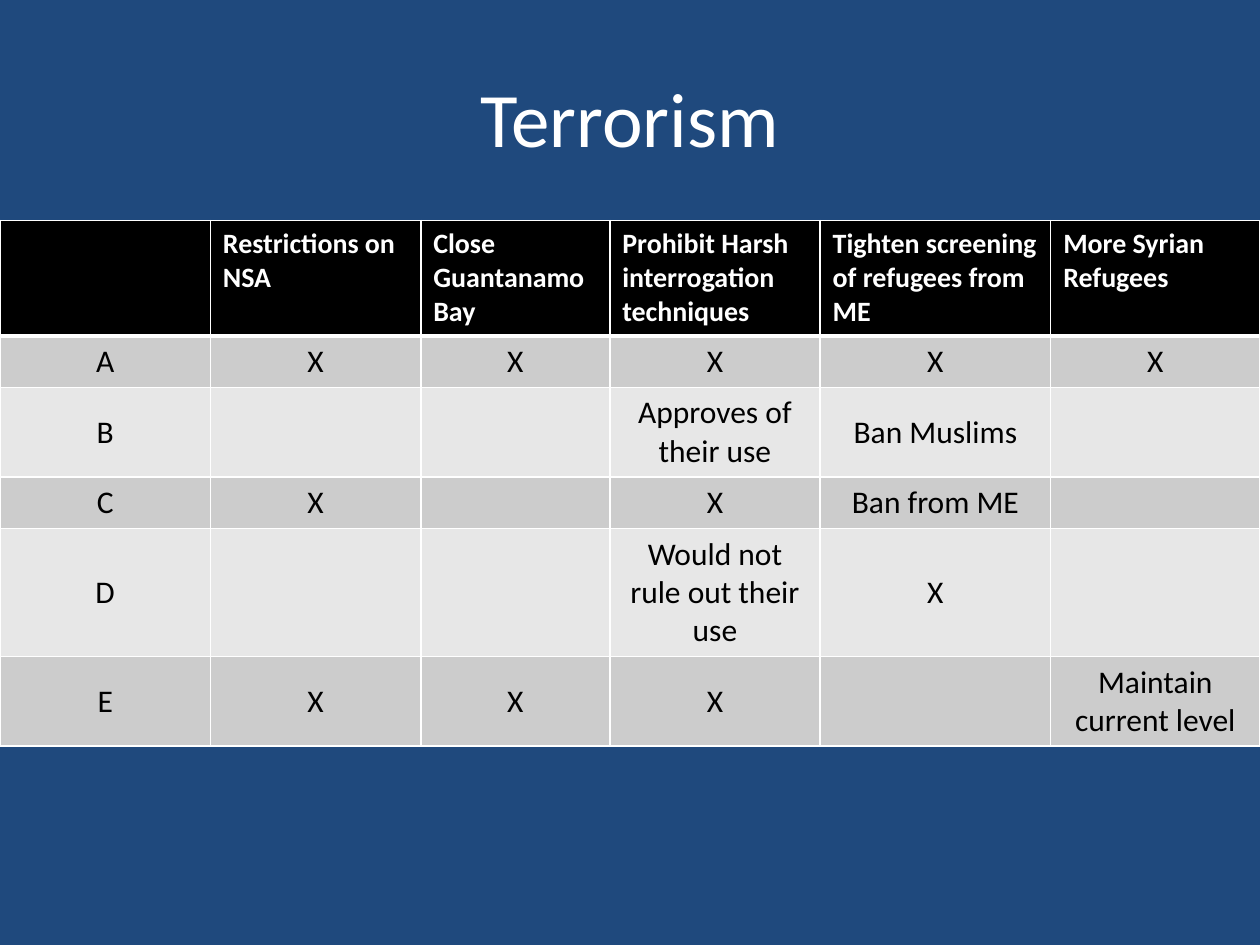
import pptx
import pptx.util
import pptx.dml.color
import pptx.enum.text
import pptx.oxml.ns
import lxml.etree

Inches = pptx.util.Inches
Pt = pptx.util.Pt
ALIGN = pptx.enum.text.PP_ALIGN
ANCHOR = pptx.enum.text.MSO_ANCHOR

COLORS = {
    "background": "1F497D",
    "white": "FFFFFF",
    "black": "000000",
    "dark_band": "CCCCCC",
    "light_band": "E7E7E7",
}

COLUMN_WIDTHS = [1.67, 1.67, 1.5, 1.67, 1.83, 1.66]
ROW_HEIGHT = 0.41
POSITIONS = [
    ["", "Restrictions on NSA", "Close Guantanamo Bay",
     "Prohibit Harsh interrogation techniques",
     "Tighten screening of refugees from ME", "More Syrian Refugees"],
    ["A", "X", "X", "X", "X", "X"],
    ["B", "", "", "Approves of their use", "Ban Muslims", ""],
    ["C", "X", "", "X", "Ban from ME", ""],
    ["D", "", "", "Would not rule out their use", "X", ""],
    ["E", "X", "X", "X", "", "Maintain current level"],
]


class SlideBuilder:
    font_name = "Calibri"

    def __init__(self, prs):
        self.s = prs.slides.add_slide(prs.slide_layouts[5])

    def color(self, name):
        return pptx.dml.color.RGBColor.from_string(COLORS[name])

    def fill(self, target, name):
        target.fill.solid()
        target.fill.fore_color.rgb = self.color(name)

    def paragraph(self, p, size, color, bold, align):
        p.alignment = align
        p.font.name = self.font_name
        p.font.size = Pt(size)
        p.font.bold = bold
        p.font.color.rgb = self.color(color)

    def title(self, text, left, top, width, height):
        sp = self.s.shapes.title
        sp.left, sp.top = Inches(left), Inches(top)
        sp.width, sp.height = Inches(width), Inches(height)
        tf = sp.text_frame
        tf.text = text
        tf.vertical_anchor = ANCHOR.MIDDLE
        self.paragraph(tf.paragraphs[0], 44, "white", False, ALIGN.CENTER)

    def borders(self, cell, widths):
        qn = pptx.oxml.ns.qn
        tc_pr = cell._tc.get_or_add_tcPr()
        for side, width in widths.items():
            ln = lxml.etree.SubElement(tc_pr, qn(f"a:ln{side}"), w=str(Pt(width)))
            solid = lxml.etree.SubElement(ln, qn("a:solidFill"))
            lxml.etree.SubElement(solid, qn("a:srgbClr"), val=COLORS["white"])

    def cell(self, cell, text, row):
        header = row == 0
        self.borders(cell, {"L": 1, "R": 1, "T": 3 if row == 1 else 1,
                            "B": 3 if header else 1})
        band = "dark_band" if row % 2 else "light_band"
        self.fill(cell, "black" if header else band)
        cell.text = text
        p = cell.text_frame.paragraphs[0]
        if header:
            self.paragraph(p, 16, "white", True, ALIGN.LEFT)
        else:
            cell.vertical_anchor = ANCHOR.MIDDLE
            self.paragraph(p, 18, "black", False, ALIGN.CENTER)

    def table(self, rows, widths, left, top):
        frame = self.s.shapes.add_table(
            len(rows), len(widths), Inches(left), Inches(top),
            Inches(sum(widths)), Inches(ROW_HEIGHT * len(rows)))
        table = frame.table
        for column, width in zip(table.columns, widths):
            column.width = Inches(width)
        for r, texts in enumerate(rows):
            table.rows[r].height = Inches(ROW_HEIGHT)
            for c, text in enumerate(texts):
                self.cell(table.cell(r, c), text, r)


def main():
    prs = pptx.Presentation()
    prs.slide_width, prs.slide_height = Inches(10), Inches(7.5)
    builder = SlideBuilder(prs)
    builder.fill(builder.s.background, "background")
    builder.title("Terrorism", 0.5, 0.3, 9, 1.25)
    builder.table(POSITIONS, COLUMN_WIDTHS, 0, 1.75)
    prs.save("out.pptx")


if __name__ == "__main__":
    main()
